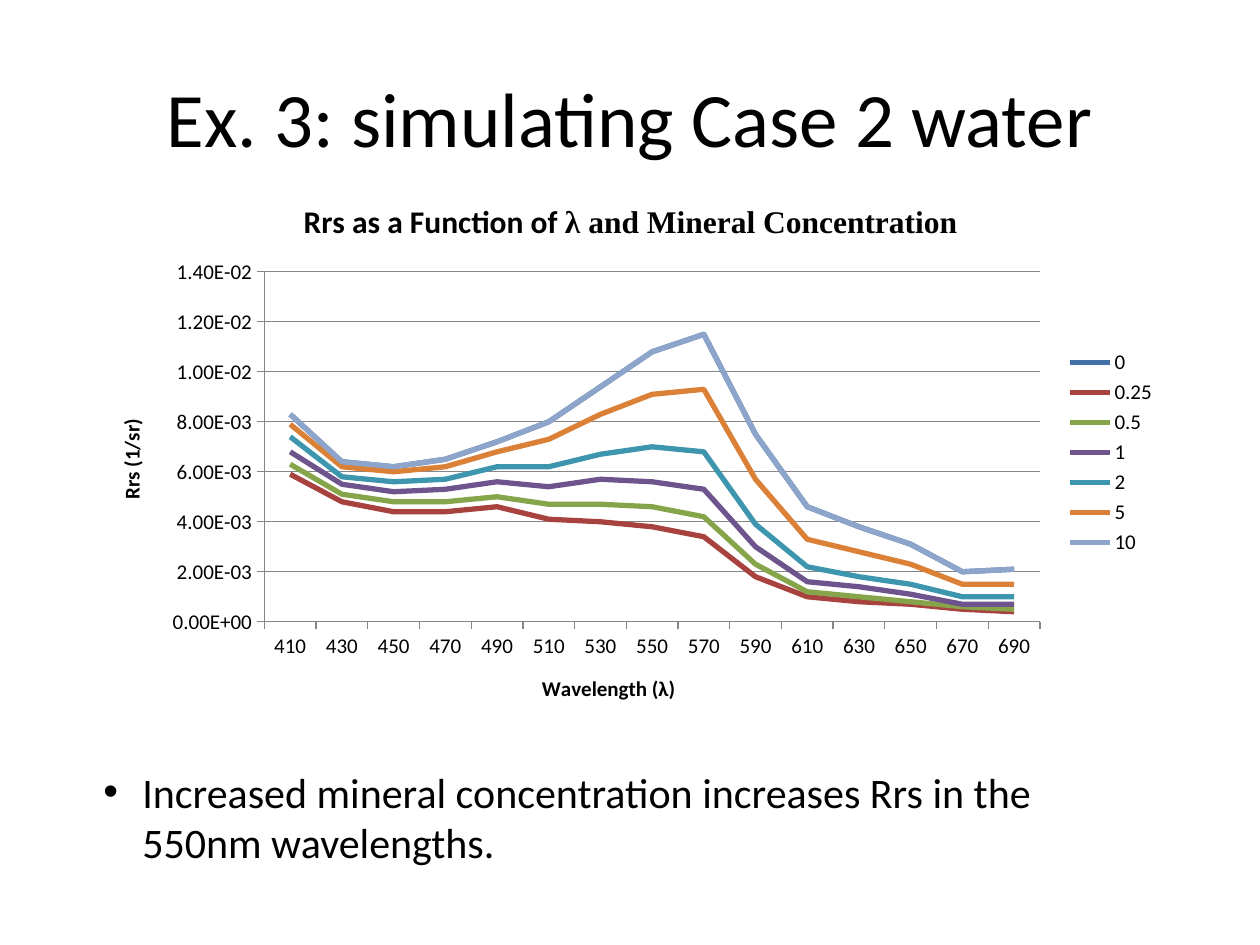
"""Build a slide with a line chart of reflectance by wavelength and mineral concentration."""
from lxml.etree import SubElement
from pptx import Presentation
from pptx.chart.data import CategoryChartData
from pptx.dml.color import RGBColor
from pptx.enum.chart import XL_CHART_TYPE as Chart, XL_LEGEND_POSITION as Legend, XL_TICK_MARK as Tick
from pptx.enum.text import MSO_ANCHOR as Anchor, PP_ALIGN as Align
from pptx.oxml.ns import qn
from pptx.util import Inches, Pt

THEME = {
    "font": "Calibri", "serif": "Times New Roman", "text": "000000", "grid": "868686",
    "title": 44, "body": 24, "chart_title": 18, "axis": 12, "line": 3,
}
TITLE = "Ex. 3: simulating Case 2 water"
BODY = "Increased mineral concentration increases Rrs in the 550nm wavelengths."
CHART_TITLE = [("Rrs as a Function of ", "font"), ("λ and Mineral Concentration", "serif")]
CATEGORY_TITLE, VALUE_TITLE = " Wavelength (λ)", "Rrs (1/sr)"
WAVELENGTHS = [str(w) for w in range(410, 691, 20)]
HIGHEST = [83, 64, 62, 65, 72, 80, 94, 108, 115, 75, 46, 38, 31, 20, 21]
SERIES = [
    ("0", "416FA6", HIGHEST),
    ("0.25", "A8423F", [59, 48, 44, 44, 46, 41, 40, 38, 34, 18, 10, 8, 7, 5, 4]),
    ("0.5", "86A44A", [63, 51, 48, 48, 50, 47, 47, 46, 42, 23, 12, 10, 8, 6, 5]),
    ("1", "6E548D", [68, 55, 52, 53, 56, 54, 57, 56, 53, 30, 16, 14, 11, 7, 7]),
    ("2", "3D96AE", [74, 58, 56, 57, 62, 62, 67, 70, 68, 39, 22, 18, 15, 10, 10]),
    ("5", "DA8137", [79, 62, 60, 62, 68, 73, 83, 91, 93, 57, 33, 28, 23, 15, 15]),
    ("10", "8EA5CB", HIGHEST),
]
VALUE_SCALE = 10000
PLOT_AREA = {"x": 0.16, "y": 0.17, "w": 0.72, "h": 0.64}


def style(font, size, face="font", bold=False):
    font.name, font.size, font.bold = THEME[face], Pt(THEME[size]), bold
    font.color.rgb = RGBColor.from_string(THEME["text"])


def add_text(p, text, align=None, **fmt):
    r = p.add_run()
    r.text = text
    style(r.font, **fmt)
    if align is not None:
        p.alignment = align


def place(sp, left, top, width, height):
    sp.left, sp.top, sp.width, sp.height = map(Inches, (left, top, width, height))


def style_line(line, color, width):
    line.color.rgb = RGBColor.from_string(color)
    line.width = Pt(width)


def set_plot_area(chart):
    plot_area = chart.plots[0]._element.getparent()
    layout = plot_area.find(qn("c:layout"))
    if layout is None:
        layout = SubElement(plot_area, qn("c:layout"))
        plot_area.insert(0, layout)
    manual = SubElement(layout, qn("c:manualLayout"))
    settings = {"layoutTarget": "inner", "xMode": "edge", "yMode": "edge", **PLOT_AREA}
    for name, value in settings.items():
        SubElement(manual, qn(f"c:{name}")).set("val", str(value))


def add_line_chart(slide):
    data = CategoryChartData()
    data.categories = WAVELENGTHS
    for name, _, values in SERIES:
        data.add_series(name, [v / VALUE_SCALE for v in values])
    box = map(Inches, (0.73, 1.42, 8.55, 4.34))
    chart = slide.shapes.add_chart(Chart.LINE, *box, data).chart
    style(chart.font, "axis")
    chart.has_title = True
    chart.chart_title.include_in_layout = False
    for text, face in CHART_TITLE:
        add_text(chart.chart_title.text_frame.paragraphs[0], text,
                 size="chart_title", face=face, bold=True)

    for axis, title in ((chart.category_axis, CATEGORY_TITLE), (chart.value_axis, VALUE_TITLE)):
        add_text(axis.axis_title.text_frame.paragraphs[0], title, size="axis", bold=True)
        axis.major_tick_mark, axis.minor_tick_mark = Tick.OUTSIDE, Tick.NONE
        style(axis.tick_labels.font, "axis")
        style_line(axis.format.line, THEME["grid"], 0.75)
    value_axis = chart.value_axis
    value_axis.minimum_scale, value_axis.maximum_scale, value_axis.major_unit = 0, 0.014, 0.002
    value_axis.tick_labels.number_format = "0.00E+00"
    value_axis.tick_labels.number_format_is_linked = False
    style_line(value_axis.major_gridlines.format.line, THEME["grid"], 0.75)

    chart.has_legend = True
    chart.legend.position, chart.legend.include_in_layout = Legend.RIGHT, False
    style(chart.legend.font, "axis")
    plot = chart.plots[0]
    plot.vary_by_categories = False
    for series, (_, color, _) in zip(plot.series, SERIES):
        series.smooth = False
        style_line(series.format.line, color, THEME["line"])
    set_plot_area(chart)


def main():
    prs = Presentation()
    prs.slide_width, prs.slide_height = Inches(10), Inches(7.5)
    slide = prs.slides.add_slide(prs.slide_layouts[1])
    title, body = slide.placeholders
    place(title, 0.5, 0.3, 9, 1.25)
    title.text_frame.vertical_anchor = Anchor.MIDDLE
    add_text(title.text_frame.paragraphs[0], TITLE, align=Align.CENTER, size="title")

    place(body, 0.72, 6.03, 8.55, 0.91)
    p = body.text_frame.paragraphs[0]
    add_text(p, BODY, align=Align.LEFT, size="body")
    p_pr = p._p.get_or_add_pPr()
    p_pr.set("marL", str(Inches(0.31)))
    p_pr.set("indent", str(-Inches(0.31)))
    SubElement(p_pr, qn("a:buChar")).set("char", "•")

    add_line_chart(slide)
    prs.save("out.pptx")


if __name__ == "__main__":
    main()
